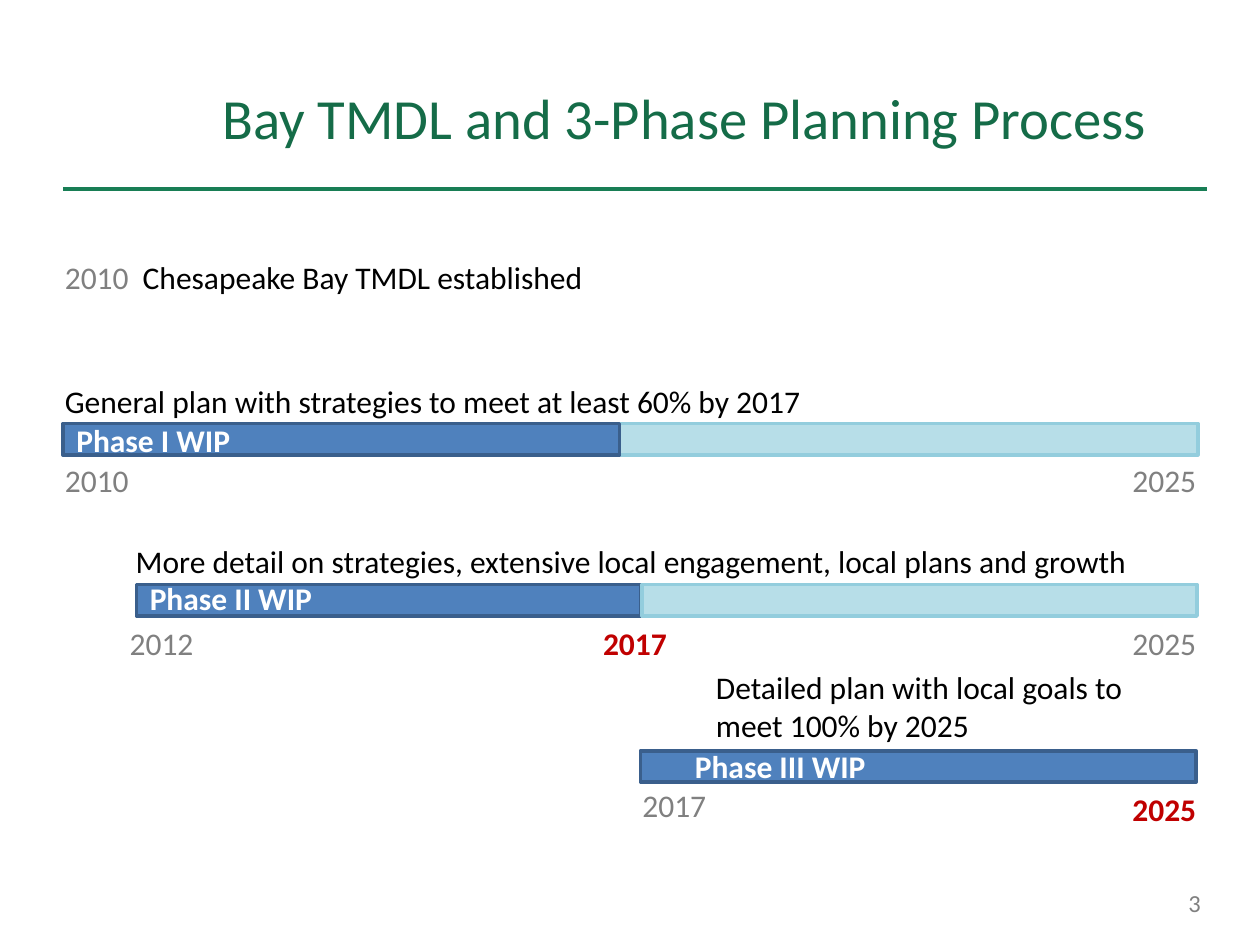
from lxml import etree
from pptx import Presentation
from pptx.dml.color import RGBColor
from pptx.enum.shapes import MSO_CONNECTOR as Connector, MSO_SHAPE as Shape
from pptx.enum.text import MSO_ANCHOR as Anchor
from pptx.oxml.ns import qn
from pptx.util import Pt

COLORS = {
    "title": "156C48", "rule": "187E55", "text": "000000",
    "year": "808080", "deadline": "C00000", "label": "FFFFFF",
    "plan": "4F81BD", "plan_line": "3A5F8C",
    "rest": "B7DEE8", "rest_line": "93CDDD",
}
LINE_HEIGHT = 29
YEAR_WIDTH = 59
LABEL_WIDTH = 276


def color(name):
    return RGBColor.from_string(COLORS[name])


class Timeline:
    """Holds the text style and the slide being drawn."""

    def __init__(self, page, font="Calibri", size=18):
        self.page = page
        self.font = font
        self.size = size

    def rule(self, left, right, y):
        line = self.page.shapes.add_connector(
            Connector.STRAIGHT, Pt(left), Pt(y), Pt(right), Pt(y))
        line.line.color.rgb = color("rule")
        line.line.width = Pt(2.25)
        etree.SubElement(line._element.spPr, qn("a:effectLst"))

    def bar(self, left, top, width, height, kind):
        box = self.page.shapes.add_shape(
            Shape.RECTANGLE, Pt(left), Pt(top), Pt(width), Pt(height))
        box.shadow.inherit = False
        box.fill.solid()
        box.fill.fore_color.rgb = color(kind)
        box.line.color.rgb = color(kind + "_line")
        box.line.width = Pt(2)

    def text(self, words, left, top, width, height=LINE_HEIGHT, tone="text",
             bold=False, size=None, anchor=Anchor.TOP):
        box = self.page.shapes.add_textbox(
            Pt(left), Pt(top), Pt(width), Pt(height))
        frame = box.text_frame
        frame.word_wrap = True
        frame.vertical_anchor = anchor
        para = frame.paragraphs[0]
        para.text = words
        self.style(para.font, tone, bold, size)
        return para

    def style(self, font, tone, bold=False, size=None):
        font.name = self.font
        font.size = Pt(size or self.size)
        font.bold = bold
        font.color.rgb = color(tone)

    def year(self, words, left, top, deadline=False):
        tone = "deadline" if deadline else "year"
        self.text(words, left, top, YEAR_WIDTH, tone=tone, bold=deadline)

    def label(self, words, left, top):
        self.text(words, left, top, LABEL_WIDTH, tone="label", bold=True)

    def event(self, year, words, left, top, width, tab):
        """Write a grey year, then its event at a tab stop."""
        para = self.text("", left, top, width)
        stops = etree.SubElement(para._p.get_or_add_pPr(), qn("a:tabLst"))
        etree.SubElement(stops, qn("a:tab"), pos=str(Pt(tab)), algn="l")
        for part, tone in ((year + "\t", "year"), (words, "text")):
            span = para.add_run()
            span.text = part
            self.style(span.font, tone)


# Each bar is (left, width, kind), each year is (text, left, top, deadline).
PHASES = [
    {
        "caption": ("General plan with strategies to meet at least 60% by 2017",
                    30, 214.5, 480, LINE_HEIGHT),
        "bar_top": 242,
        "bars": [(36.5, 648, "rest"), (36, 318, "plan")],
        "label": ("Phase I WIP", 36.5, 237),
        "years": [("2010", 30, 260, False), ("2025", 640, 260, False)],
    },
    {
        "caption": ("More detail on strategies, extensive local engagement, "
                    "local plans and growth", 70.5, 306, 606, LINE_HEIGHT),
        "bar_top": 334,
        "bars": [(78, 288, "plan"), (367, 317, "rest")],
        "label": ("Phase II WIP", 78.5, 327.5),
        "years": [("2012", 67, 353, False), ("2017", 337.5, 353, True),
                  ("2025", 640, 353, False)],
    },
    {
        "caption": ("Detailed plan with local goals to meet 100% by 2025",
                    402, 378, 275, 51),
        "bar_top": 429,
        "bars": [(366, 317.5, "plan")],
        "label": ("Phase III WIP", 390, 423.5),
        "years": [("2017", 360, 445.5, False), ("2025", 640, 448, True)],
    },
]


def main():
    deck = Presentation()
    deck.slide_width, deck.slide_height = Pt(720), Pt(540)
    page = deck.slides.add_slide(deck.slide_layouts[6])
    timeline = Timeline(page)

    timeline.rule(36, 690, 108)
    timeline.text("Bay TMDL and 3-Phase Planning Process", 120, 21.5, 564, 90,
                  tone="title", size=32.4, anchor=Anchor.MIDDLE)
    timeline.event("2010", "Chesapeake Bay TMDL established",
                   30, 144, 366, tab=44.5)
    for phase in PHASES:
        timeline.text(*phase["caption"])
        for left, width, kind in phase["bars"]:
            timeline.bar(left, phase["bar_top"], width, 18, kind)
        timeline.label(*phase["label"])
        for year in phase["years"]:
            timeline.year(*year)
    timeline.text("3", 672, 504, 36, 24.5, tone="year", size=14)

    deck.save("out.pptx")


if __name__ == "__main__":
    main()
